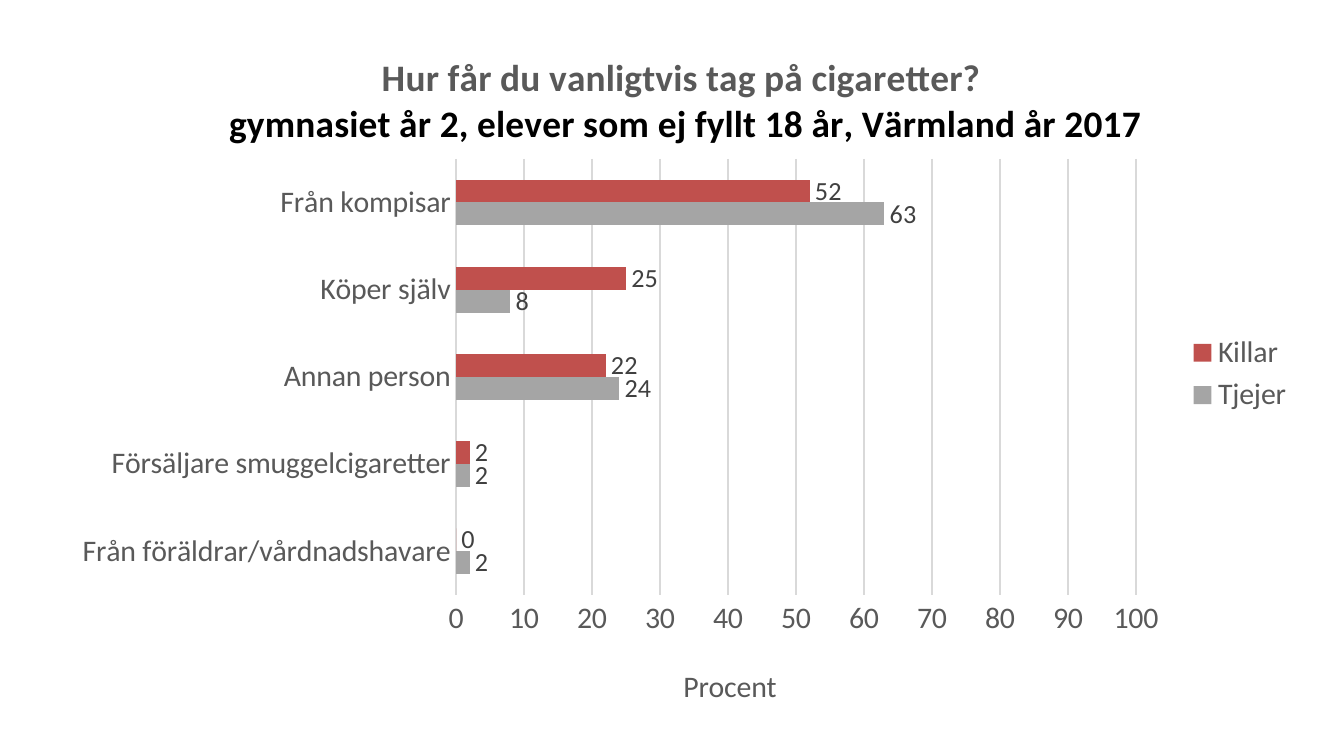
from pptx import Presentation
from pptx.chart.data import CategoryChartData
from pptx.dml.color import RGBColor
from pptx.enum.chart import XL_CHART_TYPE, XL_LABEL_POSITION, XL_LEGEND_POSITION, XL_TICK_MARK
from pptx.oxml import parse_xml
from pptx.oxml.ns import nsdecls, qn
from pptx.util import Pt

EMU_PER_PX = 914400 / 134.4
TEXT, GRID, LABEL, BLACK = "595959", "D9D9D9", "404040", "000000"
CATEGORIES = ["Från föräldrar/vårdnadshavare", "Försäljare smuggelcigaretter",
              "Annan person", "Köper själv", "Från kompisar"]
SERIES = [("Tjejer", "A5A5A5", [2, 2, 24, 8, 63]),
          ("Killar", "C0504D", [0, 2, 22, 25, 52])]


def px(n):
    return round(n * EMU_PER_PX)


def rgb(code):
    return RGBColor.from_string(code)


class ChartSlide:
    font_name = "Calibri"

    def __init__(self, prs):
        self.s = prs.slides.add_slide(prs.slide_layouts[6])

    def style(self, font, size, color, bold=False):
        font.name, font.size, font.bold = self.font_name, Pt(size), bold
        font.color.rgb = rgb(color)

    def bar_chart(self, left, top, width, height):
        self.box = left, top, width, height
        data = CategoryChartData(number_format="0")
        data.categories = CATEGORIES
        for name, _, values in SERIES:
            data.add_series(name, values)
        frame = self.s.shapes.add_chart(
            XL_CHART_TYPE.BAR_CLUSTERED, *[px(n) for n in self.box], data)
        self.chart = frame.chart
        self.style(self.chart.font, 12, BLACK)

    def place(self, parent, left, top, width=None, height=None):
        """Fix a chart part at a slide position; a size marks the inner plot."""
        for old in parent.findall(qn("c:layout")):
            parent.remove(old)
        x0, y0, w0, h0 = self.box
        parts = [("xMode", "edge"), ("yMode", "edge"),
                 ("x", round((left - x0) / w0, 4)), ("y", round((top - y0) / h0, 4))]
        if width:
            parts.insert(0, ("layoutTarget", "inner"))
            parts += [("w", round(width / w0, 4)), ("h", round(height / h0, 4))]
        inner = "".join(f'<c:{tag} val="{val}"/>' for tag, val in parts)
        layout = parse_xml(f'<c:layout {nsdecls("c")}><c:manualLayout>{inner}'
                           "</c:manualLayout></c:layout>")
        tx = parent.find(qn("c:tx"))
        parent.insert(0 if tx is None else parent.index(tx) + 1, layout)

    def title(self, owner, lines, size, bold, left, top):
        tf = owner.text_frame
        for i, (text, color) in enumerate(lines):
            p = tf.add_paragraph() if i else tf.paragraphs[0]
            r = p.add_run()
            r.text = text
            self.style(r.font, size, color, bold)
        self.place(owner.element, left, top)

    def axis(self, axis, line=None):
        axis.major_tick_mark = axis.minor_tick_mark = XL_TICK_MARK.NONE
        self.style(axis.tick_labels.font, 16, TEXT)
        if line:
            self.rule(axis.format.line, line)
        else:
            axis.format.line.fill.background()

    def rule(self, line, color):
        line.color.rgb = rgb(color)
        line.width = Pt(0.75)

    def bars(self, gap):
        plot = self.chart.plots[0]
        plot.gap_width, plot.overlap, plot.vary_by_categories = gap, 0, False
        for series, (_, color, _) in zip(plot.series, SERIES):
            series.format.fill.solid()
            series.format.fill.fore_color.rgb = rgb(color)
            series.invert_if_negative = False
            labels = series.data_labels
            labels.show_value = True
            labels.position = XL_LABEL_POSITION.OUTSIDE_END
            labels.number_format, labels.number_format_is_linked = "0", False
            self.style(labels.font, 14, LABEL)

    def legend(self):
        self.chart.has_legend = True
        legend = self.chart.legend
        legend.position = XL_LEGEND_POSITION.RIGHT
        legend.include_in_layout = False
        self.style(legend.font, 16, TEXT)


def main():
    prs = Presentation()
    prs.slide_width, prs.slide_height = px(1344), px(756)
    slide = ChartSlide(prs)
    slide.bar_chart(58, 19, 1249, 710)
    chart = slide.chart

    # Heading and plot area
    chart.has_title = True
    slide.title(chart.chart_title,
                [("Hur får du vanligtvis tag på cigaretter? ", TEXT),
                 ("gymnasiet år 2, elever som ej fyllt 18 år, Värmland år 2017", BLACK)],
                20, True, 225, 48)
    slide.place(chart.element.find(".//" + qn("c:plotArea")), 456, 159, 680, 436)

    # Axes
    slide.axis(chart.category_axis, GRID)
    percent = chart.value_axis
    slide.axis(percent)
    percent.minimum_scale, percent.maximum_scale, percent.major_unit = 0, 100, 10
    percent.tick_labels.number_format = "0"
    percent.tick_labels.number_format_is_linked = False
    percent.has_major_gridlines = True
    slide.rule(percent.major_gridlines.format.line, GRID)
    slide.title(percent.axis_title, [("Procent", TEXT)], 16, False, 678, 661)

    # Bars and legend
    slide.bars(182)
    slide.legend()
    prs.save("out.pptx")


if __name__ == "__main__":
    main()
